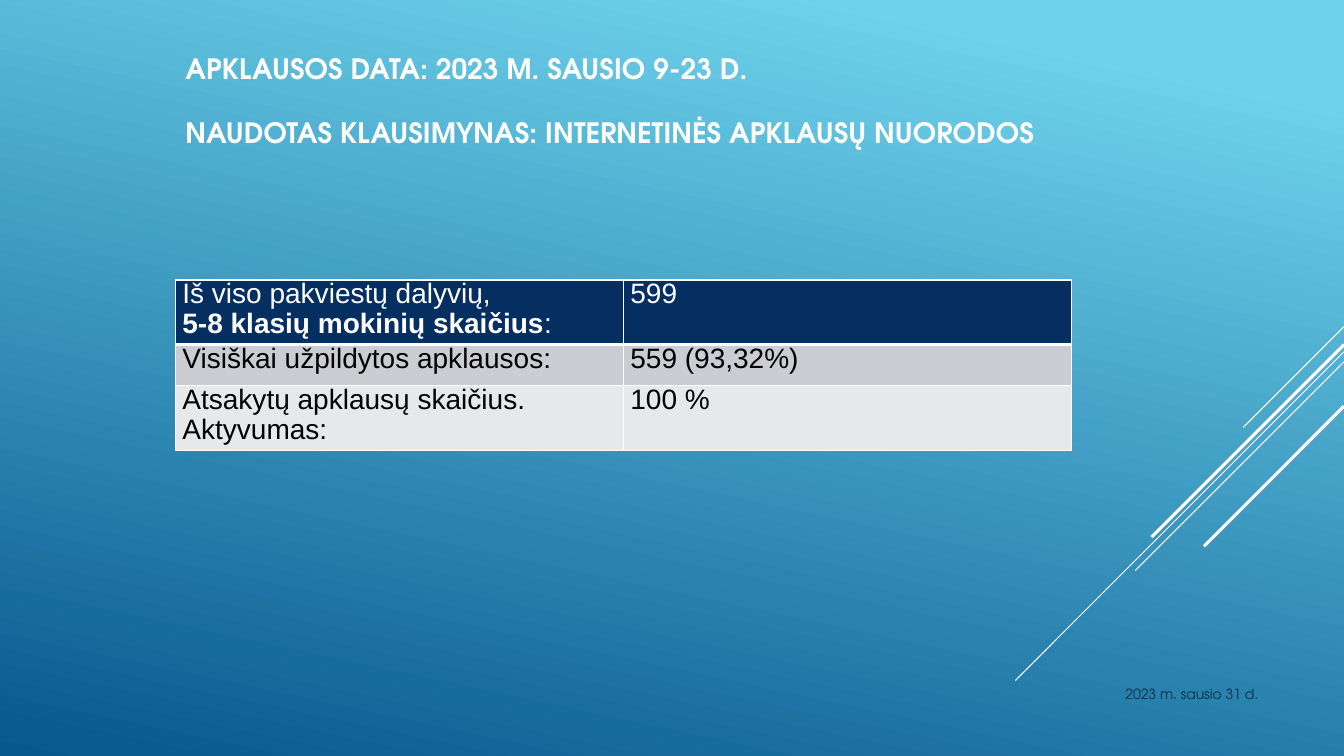
from lxml import etree
from pptx import Presentation
from pptx.dml.color import RGBColor as RGB
from pptx.enum.shapes import MSO_CONNECTOR as CONN
from pptx.enum.text import MSO_ANCHOR as ANCHOR, PP_ALIGN as ALIGN
from pptx.oxml.ns import qn
from pptx.util import Pt

WHITE = RGB(0xFF, 0xFF, 0xFF)
BLACK = RGB(0x00, 0x00, 0x00)
SKY = RGB(0x6E, 0xD2, 0xEB)
DEEP = RGB(0x06, 0x58, 0x8E)
INK = RGB(0x0A, 0x30, 0x4A)
NAVY = RGB(0x05, 0x2F, 0x61)
GREY = RGB(0xCC, 0xCD, 0xD2)
PALE = RGB(0xE7, 0xE8, 0xEA)

WIDTH, HEIGHT = 960, 540
STREAKS = [(233.3, 72, 0.75), (251.3, 234.7, 0.75), (258.5, 149, 0.75),
           (246.2, 137.5, 2.25), (290.2, 100, 2.25)]
TITLE = ["APKLAUSOS DATA: 2023 M. SAUSIO 9-23 D.",
         "NAUDOTAS KLAUSIMYNAS: INTERNETINĖS APKLAUSŲ NUORODOS"]
ROWS = [
    (["Iš viso pakviestų dalyvių,", [("5-8 klasių mokinių skaičius", True), (":", False)]], ["599"]),
    (["Visiškai užpildytos apklausos:"], ["559 (93,32%)"]),
    (["Atsakytų apklausų skaičius. Aktyvumas:"], ["100 %"]),
]
ROW_STYLES = [(44.3, NAVY, WHITE), (29.3, GREY, BLACK), (44.3, PALE, BLACK)]


def write(tf, lines, font, size, color, bold=False, align=ALIGN.LEFT, spacing=1.0, gap=0):
    """Fill a text frame with lines, each a string or a list of (text, bold) runs."""
    tf.word_wrap = True
    for i, line in enumerate(lines):
        p = tf.add_paragraph() if i else tf.paragraphs[0]
        p.alignment, p.line_spacing = align, spacing
        p.space_before = Pt(gap if i else 0)
        for text, is_bold in [(line, bold)] if isinstance(line, str) else line:
            r = p.add_run()
            r.text = text
            r.font.name, r.font.size, r.font.bold = font, Pt(size), is_bold
            r.font.color.rgb = color


class Deck:
    """Hold the presentation style and the current slide."""

    head_font = "TeX Gyre Adventor"
    body_font = "Arial"

    def __init__(self):
        """Start a presentation with one blank slide."""
        self.prs = Presentation()
        self.prs.slide_width, self.prs.slide_height = Pt(WIDTH), Pt(HEIGHT)
        self.s = self.prs.slides.add_slide(self.prs.slide_layouts[6])

    def background(self, start, end, angle):
        """Paint a two-colour gradient behind the slide."""
        fill = self.s.background.fill
        fill.gradient()
        fill.gradient_angle = angle
        for stop, color, position in zip(fill.gradient_stops, (start, end), (0.1, 1)):
            stop.color.rgb, stop.position = color, position

    def streak(self, y, run, width):
        """Draw a diagonal line down and left from the right edge."""
        line = self.s.shapes.add_connector(
            CONN.STRAIGHT, Pt(WIDTH), Pt(y), Pt(WIDTH - run), Pt(y + run))
        line.line.color.rgb, line.line.width = WHITE, Pt(width)
        etree.SubElement(line._element.spPr, qn("a:effectLst"))

    def text(self, x, y, w, h, lines, **style):
        """Add a text box in the heading font."""
        tf = self.s.shapes.add_textbox(Pt(x), Pt(y), Pt(w), Pt(h)).text_frame
        tf.vertical_anchor = ANCHOR.TOP
        write(tf, lines, self.head_font, **style)

    def borders(self, cell, **widths):
        """Set white cell borders, given widths by side."""
        tcPr = cell._tc.get_or_add_tcPr()
        for i, (side, width) in enumerate(widths.items()):
            ln = etree.Element(qn(f"a:ln{side}"), w=str(Pt(width)))
            fill = etree.SubElement(ln, qn("a:solidFill"))
            etree.SubElement(fill, qn("a:srgbClr"), val=str(WHITE))
            tcPr.insert(i, ln)

    def table(self, x, y, w, rows, styles):
        """Add a table with a fill and a text colour for each row."""
        height = sum(h for h, _, _ in styles)
        table = self.s.shapes.add_table(
            len(rows), len(rows[0]), Pt(x), Pt(y), Pt(w), Pt(height)).table
        for i, (row, (h, fill, color)) in enumerate(zip(rows, styles)):
            table.rows[i].height = Pt(h)
            for j, lines in enumerate(row):
                cell = table.cell(i, j)
                cell.margin_left = cell.margin_right = Pt(5)
                cell.margin_top = cell.margin_bottom = Pt(0)
                cell.fill.solid()
                cell.fill.fore_color.rgb = fill
                write(cell.text_frame, lines, self.body_font, 20, color, spacing=0.96)
                self.borders(cell, L=1, R=1, T=3 if i == 1 else 1, B=3 if i == 0 else 1)


def main():
    """Build and save the survey slide."""
    deck = Deck()
    deck.background(SKY, DEEP, 258)
    for streak in STREAKS:
        deck.streak(*streak)
    deck.text(125.3, 36, 769.7, 164, TITLE, size=20, color=WHITE, bold=True, spacing=0.9, gap=24)
    deck.text(779.8, 486, 126, 28.8, ["2023 m. sausio 31 d."],
              size=10, color=INK, align=ALIGN.RIGHT)
    deck.table(125.3, 200, 640, ROWS, ROW_STYLES)
    deck.prs.save("out.pptx")


if __name__ == "__main__":
    main()
